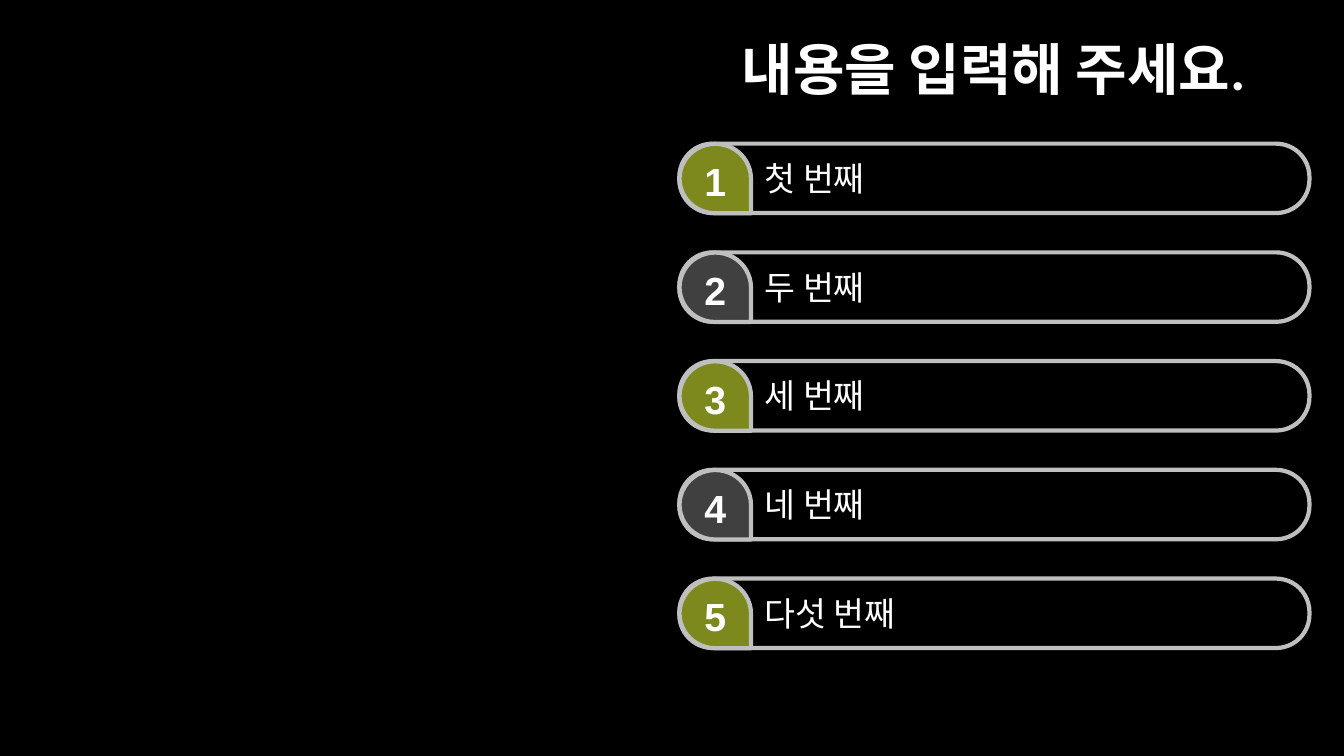
import pptx
import pptx.util
import pptx.dml.color
import pptx.enum.shapes
import pptx.enum.text

Cm = pptx.util.Cm
RGBColor = pptx.dml.color.RGBColor
MSO_SHAPE = pptx.enum.shapes.MSO_SHAPE
MSO_ANCHOR = pptx.enum.text.MSO_ANCHOR
MSO_AUTO_SIZE = pptx.enum.text.MSO_AUTO_SIZE
PP_ALIGN = pptx.enum.text.PP_ALIGN

BLACK = RGBColor(0x00, 0x00, 0x00)
WHITE = RGBColor(0xFF, 0xFF, 0xFF)
SILVER = RGBColor(0xBF, 0xBF, 0xBF)
OLIVE = RGBColor(0x7D, 0x89, 0x1D)
CHARCOAL = RGBColor(0x40, 0x40, 0x40)

ENTRIES = ["첫 번째", "두 번째", "세 번째", "네 번째", "다섯 번째"]
FIRST_TOP = 3.62
PITCH = 2.74


def add_text(shapes, box, text, font, size, bold, align):
    textbox = shapes.add_textbox(*[Cm(length) for length in box])
    frame = textbox.text_frame
    frame.text = text
    frame.word_wrap = True
    paragraph = frame.paragraphs[0]
    paragraph.alignment = align
    run_font = paragraph.runs[0].font
    run_font.name = font
    run_font.size = pptx.util.Pt(size)
    run_font.bold = bold
    run_font.color.rgb = WHITE
    return frame


def add_outlined(shapes, preset, box):
    outlined = shapes.add_shape(preset, *[Cm(length) for length in box])
    outlined.shadow.inherit = False
    outlined.line.color.rgb = SILVER
    outlined.line.width = pptx.util.Pt(3)
    return outlined


presentation = pptx.Presentation()
presentation.slide_width = Cm(33.87)
presentation.slide_height = Cm(19.05)
slide = presentation.slides.add_slide(presentation.slide_layouts[6])
slide.background.fill.solid()
slide.background.fill.fore_color.rgb = BLACK

# Heading
heading = add_text(slide.shapes, (16.81, 0.74, 16.46, 2.16),
                   "내용을 입력해 주세요.", "Calibri", 40, True, PP_ALIGN.CENTER)
heading.vertical_anchor = MSO_ANCHOR.MIDDLE
heading.paragraphs[0].line_spacing = 0.9

# Numbered entries, one group each
for index, entry in enumerate(ENTRIES):
    top = FIRST_TOP + index * PITCH
    parts = slide.shapes.add_group_shape().shapes

    bar = add_outlined(parts, MSO_SHAPE.ROUNDED_RECTANGLE, (17.12, top, 15.88, 1.75))
    bar.adjustments[0] = 0.48
    bar.fill.background()

    badge = add_outlined(parts, MSO_SHAPE.TEAR, (17.15, top - 0.02, 1.75, 1.8))
    badge.rotation = 90
    badge.fill.solid()
    badge.fill.fore_color.rgb = CHARCOAL if index % 2 else OLIVE

    number = add_text(parts, (17.35, top + 0.23, 1.35, 1.3),
                      str(index + 1), "Arial", 28, True, PP_ALIGN.CENTER)
    label = add_text(parts, (19.02, top + 0.23, 13.23, 1.28),
                     entry, "Calibri", 24, False, PP_ALIGN.LEFT)
    for frame in (number, label):
        frame.auto_size = MSO_AUTO_SIZE.SHAPE_TO_FIT_TEXT

presentation.save("out.pptx")
